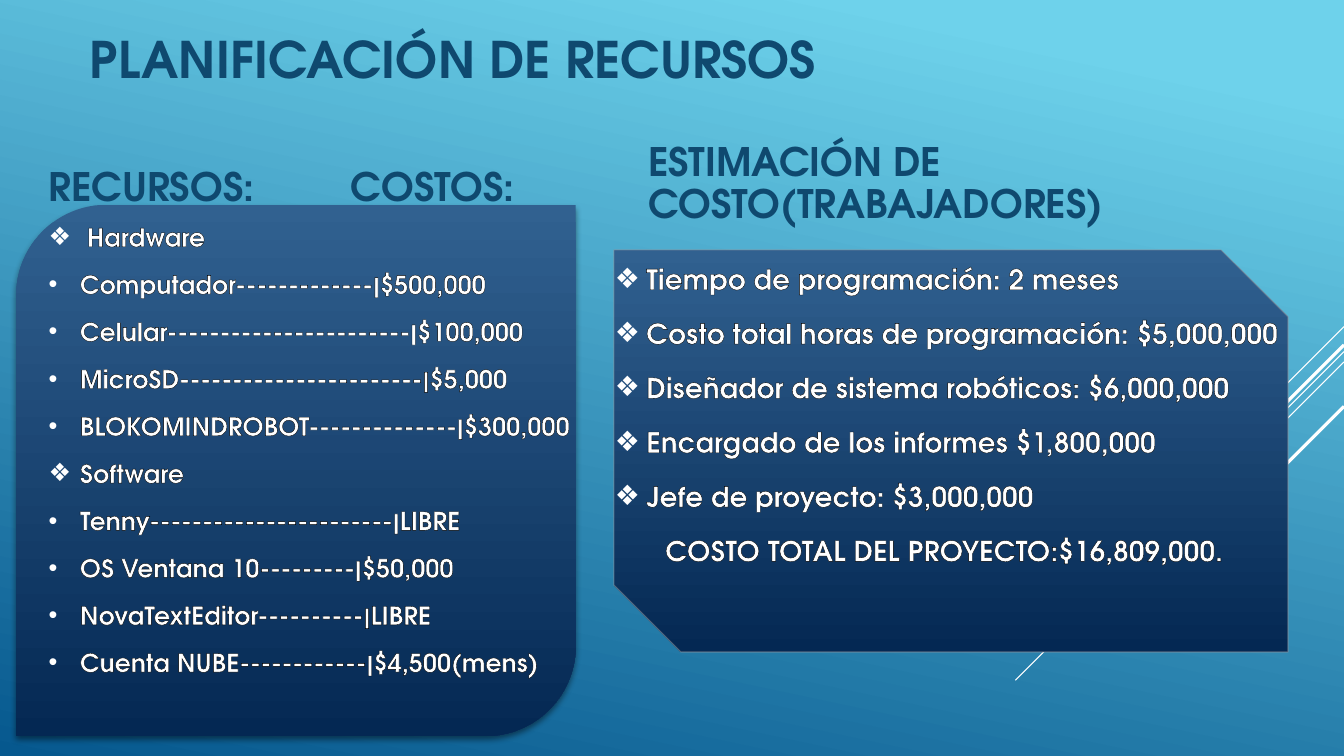
from lxml.etree import SubElement
from pptx import Presentation
from pptx.dml.color import RGBColor
from pptx.enum.shapes import MSO_CONNECTOR as Link, MSO_SHAPE as Preset
from pptx.enum.text import MSO_ANCHOR as Anchor, MSO_AUTO_SIZE as Fit, PP_ALIGN as Align
from pptx.oxml.ns import qn
from pptx.util import Cm, Pt

COLORS = {
    "sky": "6ED2EB", "sea": "06588E", "steel": "316190", "navy": "042853",
    "heading": "0F496F", "white": "FFFFFF", "black": "000000", "edge": "89919C",
}
FONT = "TeX Gyre Adventor"
SLIDE_WIDTH, SLIDE_HEIGHT = 33.87, 19.05
DIAMOND, DOT = "❖", "•"

RAYS = [(8.23, 2.54, 0.75), (8.86, 8.28, 0.75), (9.12, 5.26, 0.75),
        (8.69, 4.85, 2.25), (10.24, 3.53, 2.25)]

RESOURCES = [
    (DIAMOND, "Hardware"),
    (DOT, "Computador-------------|$500,000"),
    (DOT, "Celular-----------------------|$100,000"),
    (DOT, "MicroSD-----------------------|$5,000"),
    (DOT, "BLOKOMINDROBOT--------------|$300,000"),
    (DIAMOND, "Software"),
    (DOT, "Tenny-----------------------|LIBRE"),
    (DOT, "OS Ventana 10---------|$50,000"),
    (DOT, "NovaTextEditor----------|LIBRE"),
    (DOT, "Cuenta NUBE------------|$4,500(mens)"),
]
WORKERS = [
    (DIAMOND, "Tiempo de programación: 2 meses"),
    (DIAMOND, "Costo total horas de programación: $5,000,000"),
    (DIAMOND, "Diseñador de sistema robóticos: $6,000,000"),
    (DIAMOND, "Encargado de los informes $1,800,000"),
    (DIAMOND, "Jefe de proyecto: $3,000,000"),
    (None, "\tCOSTO TOTAL DEL PROYECTO:$16,809,000."),
]


def rgb(name):
    return RGBColor.from_string(COLORS[name])


def apply(target, values):
    for name, value in values.items():
        setattr(target, name, value)


def add_color(parent, name, opacity=100):
    color = SubElement(parent, qn("a:srgbClr"), val=COLORS[name])
    if opacity < 100:
        SubElement(color, qn("a:alpha"), val=str(opacity * 1000))


def fill_gradient(fill, angle, *stops):
    fill.gradient()
    fill.gradient_angle = 360 - angle
    for stop, (position, name) in zip(fill.gradient_stops, stops):
        stop.position = position
        stop.color.rgb = rgb(name)


def add_ray(slide, top, reach, weight):
    ray = slide.shapes.add_connector(
        Link.STRAIGHT, Cm(SLIDE_WIDTH), Cm(top), Cm(SLIDE_WIDTH - reach), Cm(top + reach))
    ray.line.color.rgb = rgb("white")
    ray.line.width = Pt(weight)
    SubElement(ray.element.spPr, qn("a:effectLst"))


def add_panel(slide, preset, box):
    panel = slide.shapes.add_shape(preset, *map(Cm, box))
    panel.shadow.inherit = False
    fill_gradient(panel.fill, 90, (0, "steel"), (1, "navy"))
    panel.line.fill.background()
    return panel


def drop_shadow(panel):
    effects = panel.element.spPr.find(qn("a:effectLst"))
    shadow = SubElement(effects, qn("a:outerShdw"), blurRad=str(Pt(4)), dist=str(Pt(3)),
                        dir="5400000", rotWithShape="0")
    add_color(shadow, "black", 46)


def outline_panel(panel):
    panel.line.color.rgb = rgb("edge")
    panel.line.width = Pt(0.75)
    edge = panel.line.fill._xPr.find(qn("a:solidFill"))[0]
    SubElement(edge, qn("a:alpha"), val="60000")


def place(slide, holder, box, anchor):
    apply(holder, dict(zip(("left", "top", "width", "height"), map(Cm, box))))
    apply(holder.text_frame, {"word_wrap": True, "auto_size": Fit.NONE,
                              "vertical_anchor": anchor})
    slide.shapes.element.append(holder.element)


def write(paragraph, text, size, color, spacing, before=0, indent=0, bullet=None, tabs=()):
    apply(paragraph, {"alignment": Align.LEFT, "line_spacing": spacing,
                      "space_before": Pt(before), "space_after": Pt(0)})
    run = paragraph.add_run()
    run.text = text
    apply(run.font, {"name": FONT, "size": Pt(size), "bold": True})
    run.font.color.rgb = rgb(color)
    props = paragraph._p.get_or_add_pPr()
    props.set("marL", str(Cm(indent)))
    props.set("indent", str(-Cm(indent)))
    if bullet:
        add_color(SubElement(props, qn("a:buClr")), "white")
        SubElement(props, qn("a:buChar"), char=bullet)
    else:
        SubElement(props, qn("a:buNone"))
    if tabs:
        stops = SubElement(props, qn("a:tabLst"))
        for position in tabs:
            SubElement(stops, qn("a:tab"), pos=str(Cm(position)), algn="l")
    return run


def outline_text(run):
    props = run.font._rPr
    outline = SubElement(props, qn("a:ln"), w=str(Pt(0.75)))
    add_color(SubElement(outline, qn("a:solidFill")), "black")
    props.insert(0, outline)


def add_heading(slide, holder, box, text, size, anchor, tabs=()):
    place(slide, holder, box, anchor)
    write(holder.text_frame.paragraphs[0], text, size, "heading", 0.9, tabs=tabs)


def add_list(slide, holder, box, items, size, spacing, first_indent):
    place(slide, holder, box, Anchor.TOP)
    frame = holder.text_frame
    for index, (bullet, text) in enumerate(items):
        paragraph = frame.add_paragraph() if index else frame.paragraphs[0]
        indent = (0.79 if index else first_indent) if bullet else 0
        run = write(paragraph, text, size, "white", spacing, 10 if index else 0,
                    indent, bullet, () if bullet else (1.27,))
        outline_text(run)


def main():
    deck = Presentation()
    deck.slide_width, deck.slide_height = Cm(SLIDE_WIDTH), Cm(SLIDE_HEIGHT)
    slide = deck.slides.add_slide(deck.slide_layouts.get_by_name("Comparison"))
    fill_gradient(slide.background.fill, 102, (0.1, "sky"), (1, "sea"))
    title, resource_head, resource_list, worker_head, worker_list = list(slide.placeholders)[:5]

    for ray in RAYS:
        add_ray(slide, *ray)
    resource_panel = add_panel(slide, Preset.ROUND_2_DIAG_RECTANGLE, (0.41, 5.16, 14.1, 13.39))
    resource_panel.adjustments[0] = 0.17
    drop_shadow(resource_panel)
    outline_panel(add_panel(slide, Preset.SNIP_2_DIAG_RECTANGLE, (15.47, 6.3, 16.99, 10.13)))

    add_heading(slide, title, (2.01, 0, 27.51, 3.12), "PLANIFICACIÓN DE RECURSOS",
                36, Anchor.MIDDLE)
    add_heading(slide, resource_head, (0.97, 3.12, 13.97, 2.29), "RECURSOS:\t\tCOSTOS:",
                28, Anchor.BOTTOM, (6.35, 7.62))
    add_heading(slide, worker_head, (16.08, 3.56, 12.9, 2.29),
                "ESTIMACIÓN DE COSTO(TRABAJADORES)", 28, Anchor.BOTTOM)
    add_list(slide, resource_list, (0.97, 5.38, 15.11, 12.4), RESOURCES, 18, 1.1, 0.97)
    add_list(slide, worker_list, (15.24, 6.3, 17.65, 11.02), WORKERS, 20, 1.2, 0.79)
    deck.save("out.pptx")


if __name__ == "__main__":
    main()
